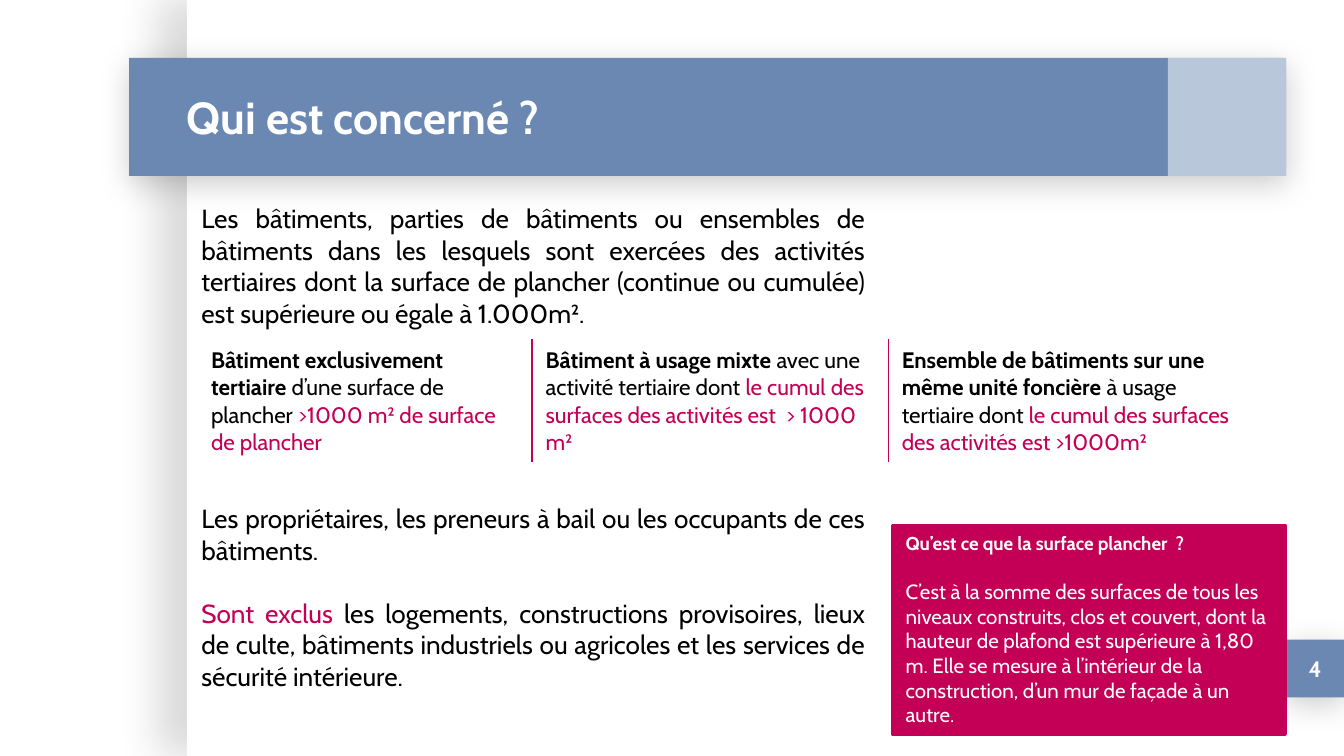
import pptx
import pptx.dml.color
import pptx.enum.shapes
import pptx.enum.text
import pptx.oxml
import pptx.oxml.ns
import pptx.util

Inches = pptx.util.Inches
Pt = pptx.util.Pt
Align = pptx.enum.text.PP_ALIGN
Anchor = pptx.enum.text.MSO_ANCHOR

COLOURS = {"white": "FFFFFF", "black": "000000", "blue": "6A88B2", "pink": "C40056"}
FONT = "Cabin"
NAMESPACE = pptx.oxml.ns.nsdecls("a")


def rgb(name):
    """Return the named colour."""
    return pptx.dml.color.RGBColor.from_string(COLOURS[name])


def add_runs(paragraph, runs, size, align=Align.LEFT):
    """Add (text, colour, bold) runs to a paragraph."""
    paragraph.alignment = align
    for text, colour, bold in runs:
        run = paragraph.add_run()
        run.text = text
        run.font.name = FONT
        run.font.size = Pt(size)
        run.font.bold = bold
        run.font.color.rgb = rgb(colour)


def add_panel(slide, box, colour):
    """Add a plain rectangle filling the box."""
    panel = slide.shapes.add_shape(
        pptx.enum.shapes.MSO_SHAPE.RECTANGLE, *map(Inches, box))
    panel.shadow.inherit = False
    panel.fill.solid()
    panel.fill.fore_color.rgb = rgb(colour)
    panel.line.fill.background()
    return panel


def cast_shadow(panel, alpha, blur, distance, angle):
    """Give a panel a soft black shadow."""
    effects = panel._element.spPr.find(pptx.oxml.ns.qn("a:effectLst"))
    effects.append(pptx.oxml.parse_xml(
        f'<a:outerShdw {NAMESPACE} blurRad="{Pt(blur)}" dist="{Pt(distance)}" '
        f'dir="{angle * 60000}" algn="ctr" rotWithShape="0">'
        f'<a:srgbClr val="{COLOURS["black"]}"><a:alpha val="{alpha * 1000}"/>'
        '</a:srgbClr></a:outerShdw>'))


def build_page(slide, box):
    """Add the white page that shades the left margin."""
    cast_shadow(add_panel(slide, box, "white"), 15, 22.5, 15, 180)


def build_page_number(slide, box, number):
    """Add the blue tab with the page number."""
    cast_shadow(add_panel(slide, box, "blue"), 20, 16.9, 3.8, 90)
    frame = slide.shapes.add_textbox(*map(Inches, box)).text_frame
    frame.word_wrap = True
    frame.margin_top = frame.margin_bottom = Inches(0.1)
    frame.vertical_anchor = Anchor.MIDDLE
    add_runs(frame.paragraphs[0], [(number, "white", True)], 12, Align.CENTER)


def build_banner(slide, box, heading):
    """Add the title band with its pale square end."""
    left, top, width, height = box
    cast_shadow(add_panel(slide, box, "blue"), 20, 16.9, 3.8, 90)
    end = add_panel(slide, (left + width - height, top, height, height), "white")
    tint = end.fill._xPr.find(".//" + pptx.oxml.ns.qn("a:srgbClr"))
    tint.append(pptx.oxml.parse_xml(f'<a:alpha {NAMESPACE} val="53000"/>'))

    title = slide.shapes.title
    slide.shapes._spTree.append(title._element)
    title.left, title.top = Inches(left + 0.33), Inches(top)
    title.width, title.height = Inches(width - height - 0.36), Inches(height)
    frame = title.text_frame
    frame.auto_size = pptx.enum.text.MSO_AUTO_SIZE.NONE
    frame.margin_top = frame.margin_bottom = Inches(0.1)
    frame.vertical_anchor = Anchor.MIDDLE
    add_runs(frame.paragraphs[0], [(heading, "white", True)], 24)


def build_scope(slide, box, statements):
    """Add the justified statements, each with its space before."""
    frame = slide.shapes.add_textbox(*map(Inches, box)).text_frame
    frame.word_wrap = True
    for index, (gap, runs) in enumerate(statements):
        paragraph = frame.add_paragraph() if index else frame.paragraphs[0]
        if gap:
            paragraph.space_before = Pt(gap)
        add_runs(paragraph, runs, 14, Align.JUSTIFY)


def add_border(cell, side):
    """Draw a pink border on one side of a cell."""
    cell._tc.get_or_add_tcPr().insert(0, pptx.oxml.parse_xml(
        f'<a:ln{side} {NAMESPACE} w="{Pt(1)}"><a:solidFill>'
        f'<a:srgbClr val="{COLOURS["pink"]}"/></a:solidFill></a:ln{side}>'))


def build_cases(slide, box, widths, cases):
    """Add the one-row table of cases divided by pink lines."""
    table = slide.shapes.add_table(1, len(cases), *map(Inches, box)).table
    table.first_row = table.horz_banding = False
    for index, (width, runs) in enumerate(zip(widths, cases)):
        table.columns[index].width = Inches(width)
        cell = table.cell(0, index)
        cell.fill.background()
        add_runs(cell.text_frame.paragraphs[0], runs, 12)
        if index < len(cases) - 1:
            add_border(cell, "R")
        if index:
            add_border(cell, "L")


def build_definition(slide, box, question, answer):
    """Add the pink box that defines floor area."""
    panel = add_panel(slide, box, "pink")
    panel.line.color.rgb = rgb("pink")
    panel.line.width = Pt(2)
    frame = panel.text_frame
    frame.word_wrap = True
    frame.vertical_anchor = Anchor.MIDDLE
    add_runs(frame.paragraphs[0], [(question, "white", True)], 10)
    explanation = frame.add_paragraph()
    explanation.space_before = Pt(13)
    add_runs(explanation, [(answer, "white", False)], 11)


def main():
    """Build and save the slide."""
    deck = pptx.Presentation()
    deck.slide_width = Inches(10)
    deck.slide_height = deck.slide_width * 9 // 16
    slide = deck.slides.add_slide(deck.slide_layouts[5])

    build_page(slide, (1.39, 0, 8.61, deck.slide_height.inches))
    build_page_number(slide, (9.57, 4.76, 0.43, 0.43), "4")
    build_banner(slide, (0.96, 0.43, 8.61, 0.88), "Qui est concerné ?")
    build_scope(slide, (1.4, 1.46, 5.14, 4.01), [
        (0, [("Les bâtiments, parties de bâtiments ou ensembles de bâtiments dans "
              "les lesquels sont exercées des activités tertiaires dont la surface "
              "de plancher (continue ou cumulée) est supérieure ou égale à "
              "1.000m².", "black", False)]),
        (93.5, [("Les propriétaires, les preneurs à bail ou les occupants de ces "
                 "bâtiments.", "black", False)]),
        (17, [("Sont exclus ", "pink", False),
              ("les logements, constructions provisoires, lieux de culte, "
               "bâtiments industriels ou agricoles et les services de sécurité "
               "intérieure.", "black", False)]),
    ])
    build_cases(slide, (1.47, 2.53, 7.79, 0.9), (2.49, 2.65, 2.65), [
        [("Bâtiment exclusivement tertiaire ", "black", True),
         ("d’une surface de plancher ", "black", False),
         (">1000 m² de surface de plancher", "pink", False)],
        [("Bâtiment à usage mixte ", "black", True),
         ("avec une activité tertiaire dont ", "black", False),
         ("le cumul des surfaces des activités est  > 1000 m²", "pink", False)],
        [("Ensemble de bâtiments sur une même unité foncière ", "black", True),
         ("à usage tertiaire dont ", "black", False),
         ("le cumul des surfaces des activités est >1000m²", "pink", False)],
    ])
    build_definition(
        slide, (6.64, 3.91, 2.92, 1.55), "Qu’est ce que la surface plancher  ?",
        "C’est à la somme des surfaces de tous les niveaux construits, clos et "
        "couvert, dont la hauteur de plafond est supérieure à 1,80 m. Elle se "
        "mesure à l’intérieur de la construction, d’un mur de façade à un autre.")
    deck.save("out.pptx")


if __name__ == "__main__":
    main()
